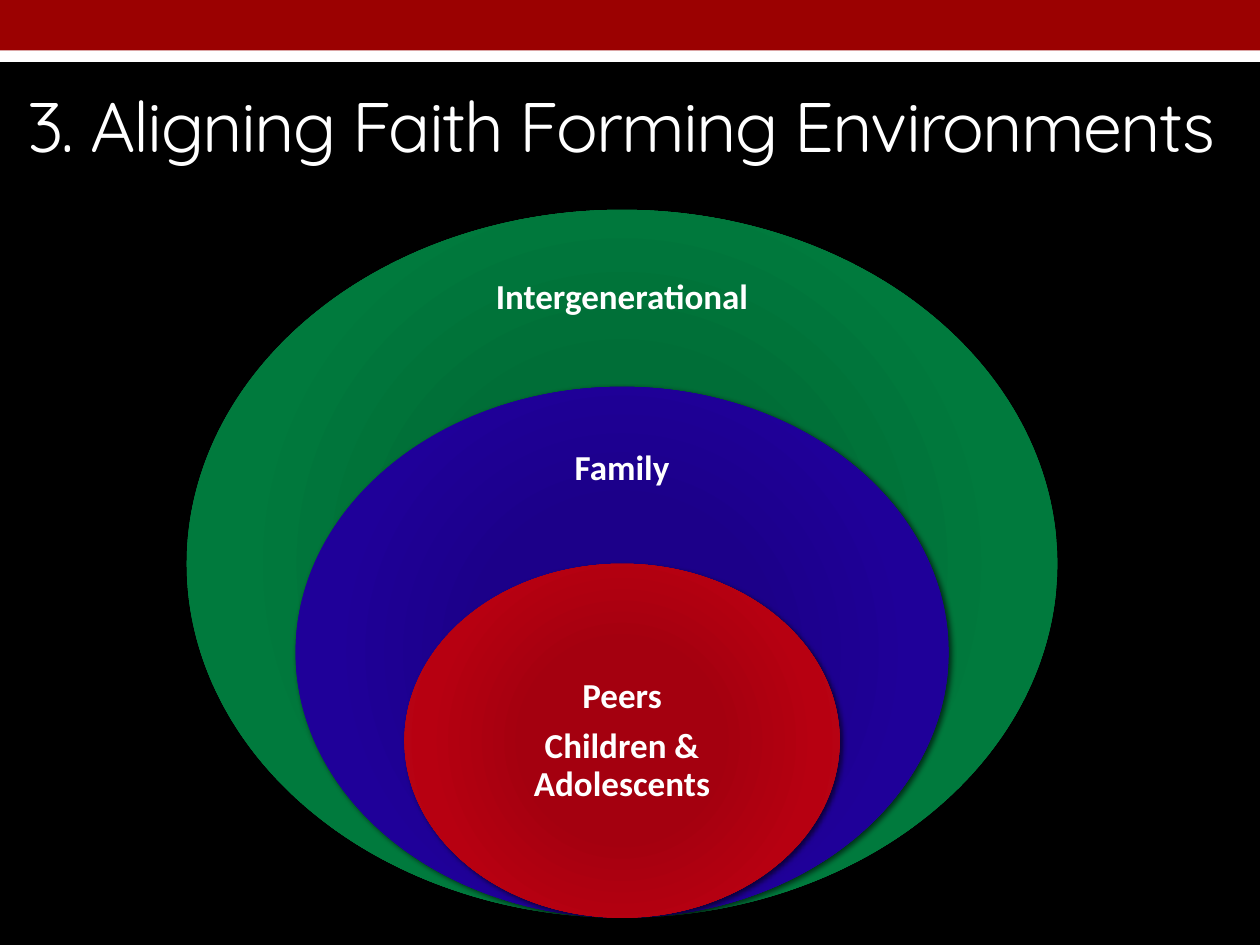
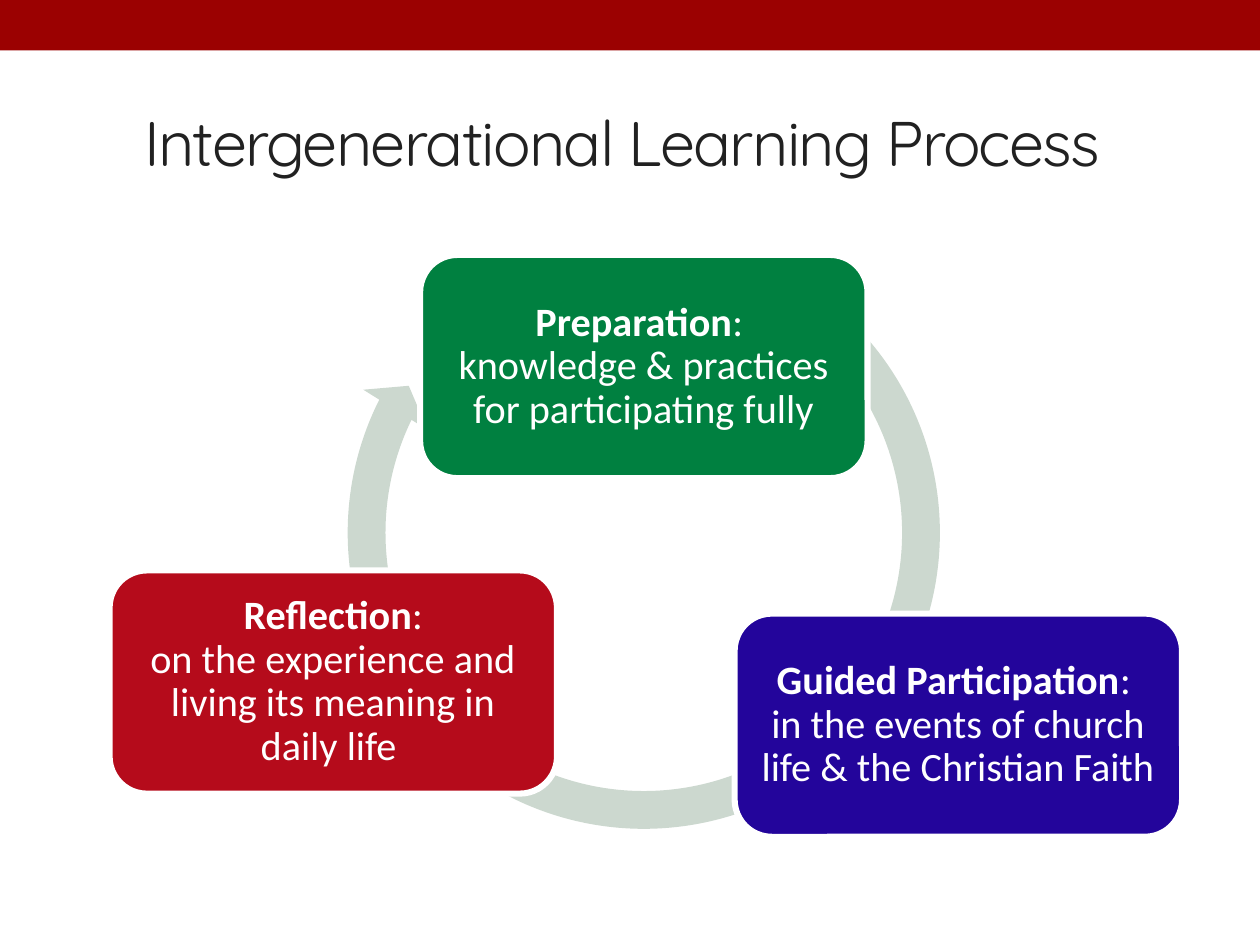
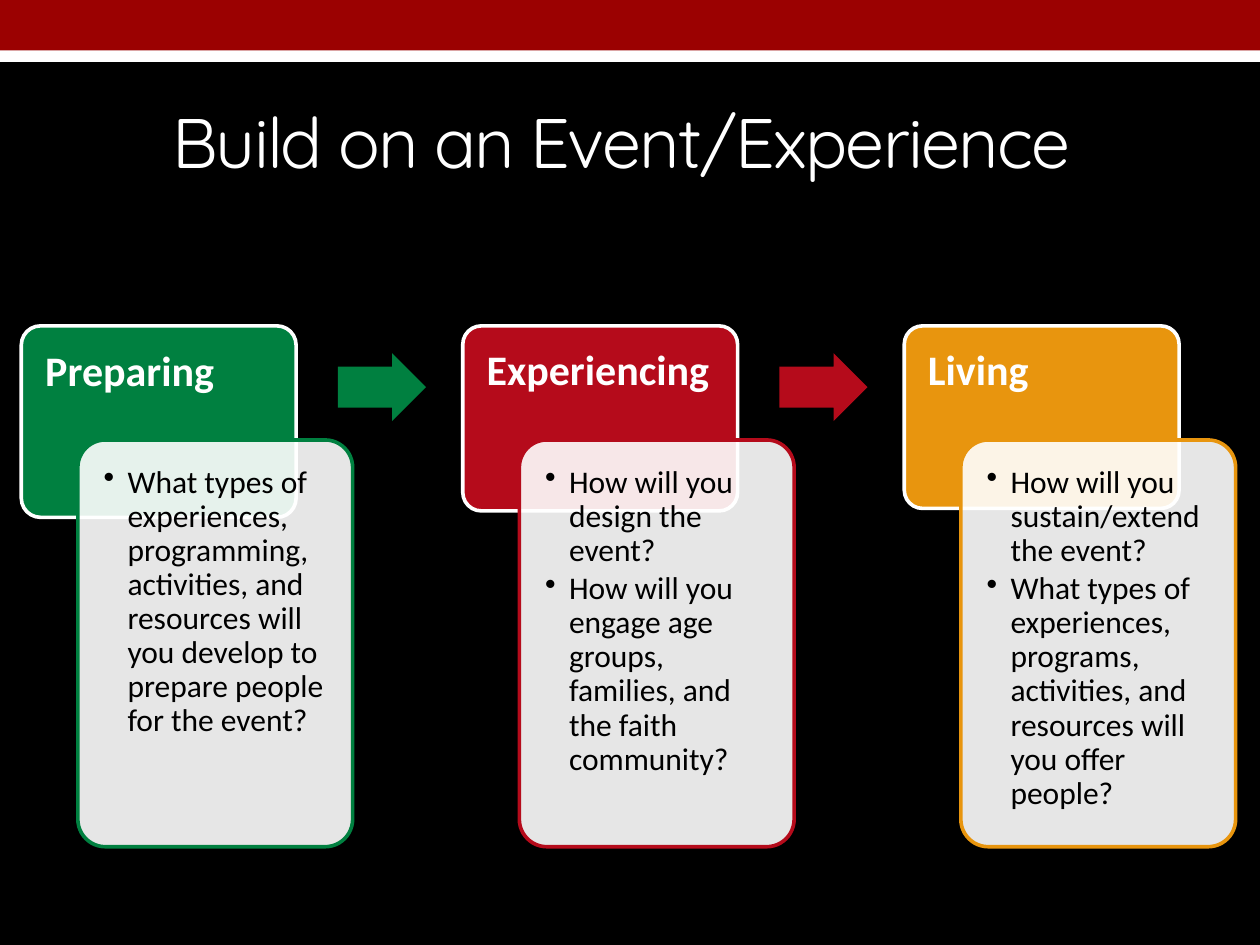
"""Build three slides on faith forming environments and intergenerational learning."""
from lxml.etree import SubElement
from pptx import Presentation
from pptx.dml.color import RGBColor
from pptx.enum.shapes import MSO_SHAPE
from pptx.enum.text import MSO_ANCHOR, PP_ALIGN
from pptx.oxml import parse_xml
from pptx.oxml.ns import nsdecls, qn
from pptx.util import Cm, Pt

SLIDE_WIDTH, SLIDE_HEIGHT = 25.4, 19.05
BLACK, WHITE, INK = "000000", "FFFFFF", "212121"
BAND, GREEN, BLUE, RED, ORANGE = "9B0101", "008040", "23059B", "B50B1B", "E8950E"
ARC_GRAY = "CCD8CF"
BODY_FONT, TITLE_FONT = "Calibri", "Quicksand"

ENVIRONMENTS_TITLE = "3. Aligning Faith Forming Environments "
ENVIRONMENTS = [
    {"scale": 1, "label": ["Intergenerational"], "label_middle": 6.02,
     "stops": [(0, "006E37"), (34, "006E37"), (70, "007A3D"), (100, GREEN)]},
    {"scale": 0.75, "label": ["Family"], "label_middle": 9.46,
     "stops": [(0, "1C0089"), (34, "1C0089"), (70, "1F0099"), (100, BLUE)]},
    {"scale": 0.5, "label": ["Peers", "Children & Adolescents"], "label_middle": 14.94,
     "stops": [(0, "A4000F"), (34, "A4000F"), (70, "B70011"), (100, RED)]},
]

PROCESS_TITLE = "Intergenerational Learning Process "
PROCESS = [
    ("Preparation", ": \nknowledge & practices for participating fully", GREEN, 8.47, 5.14),
    ("Guided Participation", ": \nin the events of church life & the Christian Faith",
     BLUE, 14.81, 12.37),
    ("Reflection", ":\non the experience and living its meaning in daily life ",
     RED, 2.21, 11.5),
]

EVENT_TITLE = "Build on an Event/Experience "
EVENT_STEPS = [
    ("Preparing", GREEN, 3.86,
     ["What types of experiences, programming, activities, and resources will "
      "you develop to prepare people for the event?"]),
    ("Experiencing", RED, 3.73,
     ["How will you design the event?",
      "How will you engage age groups, families, and the faith community?"]),
    ("Living", ORANGE, 3.68,
     ["How will you sustain/extend the event?",
      "What types of experiences, programs, activities, and resources will "
      "you offer people?"]),
]


def color(value):
    return RGBColor.from_string(value)


def add_figure(slide, kind, left, top, width, height, fill, line=None, points=0, adjustments=()):
    shape = slide.shapes.add_shape(kind, Cm(left), Cm(top), Cm(width), Cm(height))
    shape.shadow.inherit = False
    shape.fill.solid()
    shape.fill.fore_color.rgb = color(fill)
    if line:
        shape.line.color.rgb = color(line)
        shape.line.width = Pt(points)
    else:
        shape.line.fill.background()
    for index, value in enumerate(adjustments):
        shape.adjustments[index] = value
    return shape


def add_text_box(slide, left, top, width, height):
    return slide.shapes.add_textbox(Cm(left), Cm(top), Cm(width), Cm(height))


def write(shape, paragraphs, size, text_color, font=BODY_FONT, align=PP_ALIGN.CENTER,
          anchor=MSO_ANCHOR.MIDDLE, inset=None, spacing=0.9, after=0, bullet=False,
          tracking=None):
    """Fill a shape with paragraphs, each a list of (text, bold) runs."""
    frame = shape.text_frame
    frame.word_wrap = True
    frame.vertical_anchor = anchor
    if inset is not None:
        frame.margin_left = frame.margin_top = Cm(inset)
        frame.margin_right = frame.margin_bottom = Cm(inset)
    for index, runs in enumerate(paragraphs):
        paragraph = frame.add_paragraph() if index else frame.paragraphs[0]
        if bullet:
            properties = paragraph._p.get_or_add_pPr()
            properties.set("marL", str(Cm(0.48)))
            properties.set("indent", str(-Cm(0.48)))
            SubElement(properties, qn("a:buChar"), char="•")
        paragraph.alignment = align
        paragraph.line_spacing = spacing
        paragraph.space_after = Pt(after)
        for text, bold in runs:
            for line_index, line in enumerate(text.split("\n")):
                if line_index:
                    paragraph.add_line_break()
                run = paragraph.add_run()
                run.text = line
                run.font.name = font
                run.font.size = Pt(size)
                run.font.bold = bold
                run.font.color.rgb = color(text_color)
                if tracking:
                    run._r.get_or_add_rPr().set("spc", str(tracking))


def set_radial_fill(shape, stops):
    properties = shape.element.spPr
    stop_xml = "".join(
        f'<a:gs pos="{position * 1000}"><a:srgbClr val="{value}"/></a:gs>'
        for position, value in stops)
    gradient = parse_xml(
        f'<a:gradFill {nsdecls("a")} rotWithShape="1"><a:gsLst>{stop_xml}</a:gsLst>'
        '<a:path path="circle"><a:fillToRect l="100000" t="100000" r="100000" b="100000"/>'
        '</a:path></a:gradFill>')
    properties.replace(properties.find(qn("a:solidFill")), gradient)


def set_shadow(shape):
    effects = shape.element.spPr.find(qn("a:effectLst"))
    effects.append(parse_xml(
        f'<a:outerShdw {nsdecls("a")} blurRad="{Pt(3)}" dist="{Pt(2)}" dir="2700000" '
        'rotWithShape="0"><a:srgbClr val="000000"><a:alpha val="60000"/></a:srgbClr>'
        '</a:outerShdw>'))


def set_opacity(shape, percent):
    fill_color = shape.element.spPr.find(qn("a:solidFill")).find(qn("a:srgbClr"))
    SubElement(fill_color, qn("a:alpha"), val=str(percent * 1000))


def add_slide(presentation, title, title_box, title_size, dark):
    slide = presentation.slides.add_slide(presentation.slide_layouts[6])
    slide.background.fill.solid()
    slide.background.fill.fore_color.rgb = color(BLACK if dark else WHITE)
    if dark:
        add_figure(slide, MSO_SHAPE.RECTANGLE, 0, 0.61, SLIDE_WIDTH, 0.64, WHITE)
    add_figure(slide, MSO_SHAPE.RECTANGLE, 0, 0, SLIDE_WIDTH, 1.02, BAND)
    write(add_text_box(slide, *title_box), [[(title, False)]], title_size,
          WHITE if dark else INK, font=TITLE_FONT, spacing=1, tracking=-100)
    return slide


def build_environments(presentation):
    slide = add_slide(presentation, ENVIRONMENTS_TITLE, (0, 1.14, SLIDE_WIDTH, 2.74), 40, True)
    center, bottom, full_width, full_height = 12.54, 18.5, 17.55, 14.27
    label_width, label_height = 6.16, 2.1
    for environment in ENVIRONMENTS:
        width = full_width * environment["scale"]
        height = full_height * environment["scale"]
        ellipse = add_figure(slide, MSO_SHAPE.OVAL, center - width / 2, bottom - height,
                             width, height, environment["stops"][-1][1])
        set_radial_fill(ellipse, environment["stops"])
        set_shadow(ellipse)
        lines = environment["label"]
        box_height = label_height + 1.46 * (len(lines) - 1)
        label = add_text_box(slide, center - label_width / 2,
                             environment["label_middle"] - box_height / 2,
                             label_width, box_height)
        write(label, [[(line, True)] for line in lines], 20, WHITE, inset=0.41, after=7)


def build_process(presentation):
    slide = add_slide(presentation, PROCESS_TITLE, (1.27, 1.47, 22.86, 2.74), 36, False)
    add_figure(slide, MSO_SHAPE.CIRCULAR_ARROW, 6.63, 4.39, 12.7, 12.7, ARC_GRAY,
               adjustments=(0.06, 3.4, 123.8, 183, 0.06))
    for name, detail, fill, left, top in PROCESS:
        node = add_figure(slide, MSO_SHAPE.ROUNDED_RECTANGLE, left, top, 9.02, 4.5,
                          fill, WHITE, 3.5)
        write(node, [[(name, True), (detail, False)]], 23, WHITE, inset=0.25, after=8)


def build_event(presentation):
    slide = add_slide(presentation, EVENT_TITLE, (0, 1.04, SLIDE_WIDTH, 3.58), 40, True)
    first_left, pitch, width = 0.43, 8.9, 5.54
    for index, (name, fill, header_height, questions) in enumerate(EVENT_STEPS):
        left = first_left + index * pitch
        header = add_figure(slide, MSO_SHAPE.ROUNDED_RECTANGLE, left, 6.57, width,
                            header_height, fill, WHITE, 2.08, (0.1,))
        write(header, [[(name, True)]], 24, WHITE, align=PP_ALIGN.LEFT,
              anchor=MSO_ANCHOR.TOP, inset=0.37)
        card = add_figure(slide, MSO_SHAPE.ROUNDED_RECTANGLE, left + 1.14, 8.87, width,
                          8.2, WHITE, fill, 2.08, (0.1,))
        set_opacity(card, 90)
        write(card, [[(question, False)] for question in questions], 18, BLACK,
              align=PP_ALIGN.LEFT, anchor=MSO_ANCHOR.TOP, inset=0.36, after=2.7, bullet=True)
        if index < len(EVENT_STEPS) - 1:
            add_figure(slide, MSO_SHAPE.RIGHT_ARROW, left + 6.38, 7.12, 1.78, 1.37, fill,
                       adjustments=(0.6, 0.5))


def main():
    presentation = Presentation()
    presentation.slide_width = Cm(SLIDE_WIDTH)
    presentation.slide_height = Cm(SLIDE_HEIGHT)
    build_environments(presentation)
    build_process(presentation)
    build_event(presentation)
    presentation.save("out.pptx")


if __name__ == "__main__":
    main()
